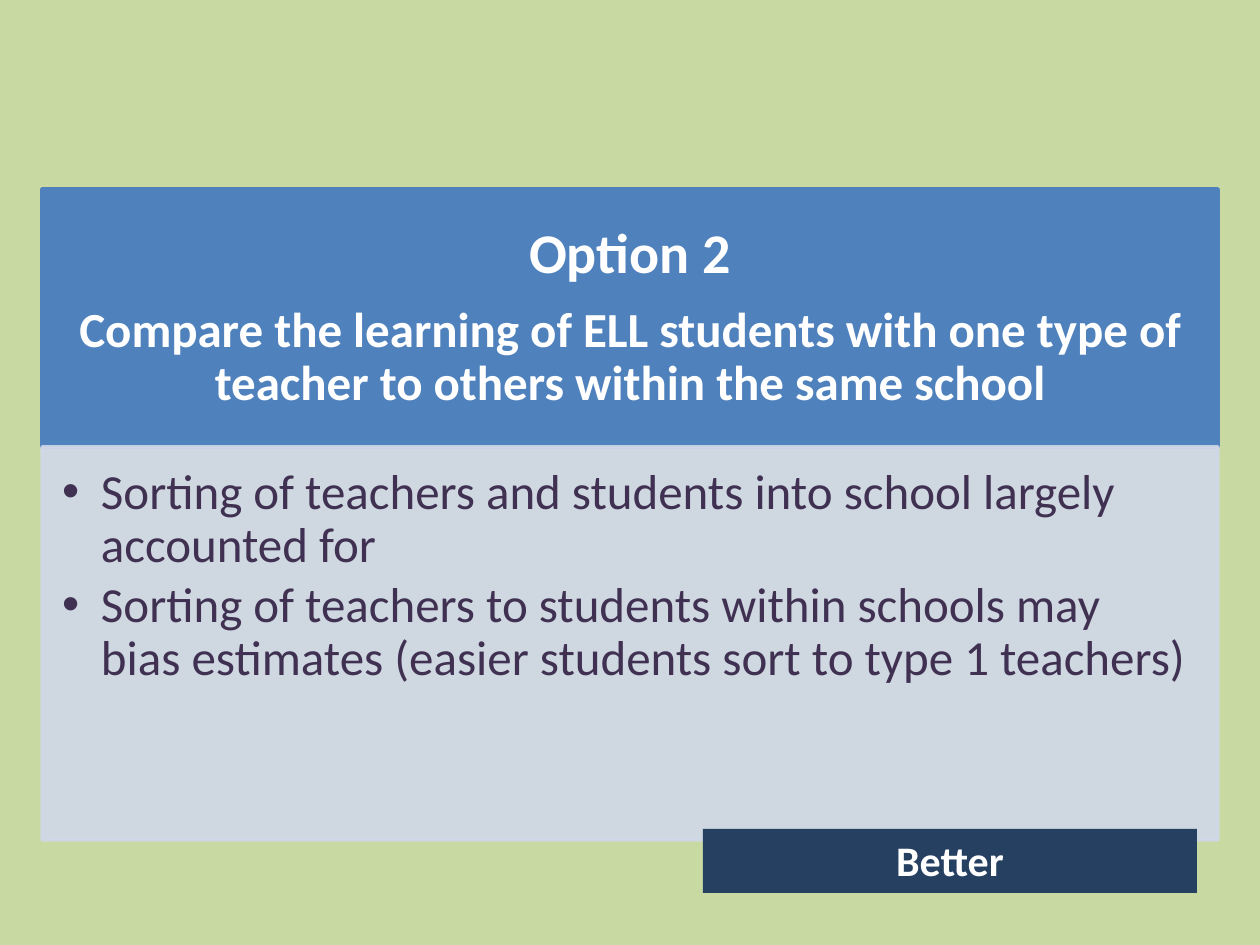
from dataclasses import dataclass

from lxml import etree
from pptx import Presentation
from pptx.dml.color import RGBColor
from pptx.enum.shapes import MSO_SHAPE
from pptx.enum.text import MSO_ANCHOR, MSO_AUTO_SIZE, PP_ALIGN
from pptx.oxml.ns import qn
from pptx.util import Emu, Pt

RECTANGLE = MSO_SHAPE.RECTANGLE
TOP, MIDDLE = MSO_ANCHOR.TOP, MSO_ANCHOR.MIDDLE
LEFT, CENTER = PP_ALIGN.LEFT, PP_ALIGN.CENTER
NO_AUTOFIT = MSO_AUTO_SIZE.NONE

PX_PER_INCH = 126
SLIDE_WIDTH, SLIDE_HEIGHT = 1260, 945


@dataclass(frozen=True)
class Theme:
    font: str = "Calibri"
    background: str = "C8DAA2"
    header: str = "4F81BD"
    panel: str = "D0D8E8"
    verdict: str = "254061"
    light_text: str = "FFFFFF"
    dark_text: str = "403152"
    title_size: int = 32
    body_size: int = 28
    verdict_size: int = 24
    outline: int = 2
    panel_opacity: int = 90


THEME = Theme()


def px(length):
    return Emu(round(length * 914400 / PX_PER_INCH))


def set_opacity(color_format_parent, percent):
    """Add an alpha value to every solid colour under the element."""
    for color in color_format_parent.iter(qn("a:srgbClr")):
        etree.SubElement(color, qn("a:alpha")).set("val", str(percent * 1000))


def format_box(box, color, outlined=True):
    box.fill.solid()
    box.fill.fore_color.rgb = RGBColor.from_string(color)
    if outlined:
        box.line.color.rgb = RGBColor.from_string(color)
        box.line.width = Pt(THEME.outline)
    else:
        box.line.fill.background()


def add_box(page, left, top, width, height, color, outlined=True):
    box = page.shapes.add_shape(RECTANGLE, px(left), px(top), px(width), px(height))
    box.shadow.inherit = False
    format_box(box, color, outlined)
    return box


def prepare_frame(box, insets, anchor):
    frame = box.text_frame
    frame.word_wrap = True
    frame.auto_size = NO_AUTOFIT
    frame.vertical_anchor = anchor
    frame.margin_left, frame.margin_top, frame.margin_right, frame.margin_bottom = map(px, insets)
    return frame


def add_bullet(para, indent):
    properties = para._p.get_or_add_pPr()
    properties.set("marL", str(px(indent)))
    properties.set("indent", str(-px(indent)))
    etree.SubElement(properties, qn("a:buFont")).set("typeface", "Arial")
    etree.SubElement(properties, qn("a:buChar")).set("char", "•")


def write_paragraphs(frame, lines, color, bold=False, align=CENTER,
                     spacing=0.9, gap=0, bullet_indent=None):
    """Write (text, size) lines; gap is a share of each line's type size."""
    for index, (text, size) in enumerate(lines):
        para = frame.add_paragraph() if index else frame.paragraphs[0]
        para.alignment = align
        para.line_spacing = spacing
        para.space_before = Pt(0)
        para.space_after = Pt(round(gap * size))
        if bullet_indent:
            add_bullet(para, bullet_indent)
        span = para.add_run()
        span.text = text
        span.font.name = THEME.font
        span.font.size = Pt(size)
        span.font.bold = bold
        span.font.color.rgb = RGBColor.from_string(color)


def add_header(page):
    title = page.shapes.title
    title.left, title.top, title.width, title.height = map(px, (42, 189, 1176, 258))
    format_box(title, THEME.header)
    frame = prepare_frame(title, (32, 18, 32, 18), MIDDLE)
    lines = [
        ("Option 2", THEME.title_size),
        ("Compare the learning of ELL students with one type of teacher "
         "to others within the same school", THEME.body_size),
    ]
    write_paragraphs(frame, lines, THEME.light_text, bold=True, gap=0.35)


def add_panel(page):
    panel = add_box(page, 42, 447, 1176, 393, THEME.panel)
    set_opacity(panel._element.spPr, THEME.panel_opacity)
    frame = prepare_frame(panel, (20, 20, 28, 30), TOP)
    points = [
        "Sorting of teachers and students into school largely accounted for",
        "Sorting of teachers to students within schools may bias estimates "
        "(easier students sort to type 1 teachers)",
    ]
    lines = [(point, THEME.body_size) for point in points]
    write_paragraphs(frame, lines, THEME.dark_text, align=LEFT, gap=0.15, bullet_indent=39)


def add_verdict(page):
    verdict = add_box(page, 703, 829, 494, 64, THEME.verdict, outlined=False)
    frame = prepare_frame(verdict, (13, 6, 13, 6), TOP)
    write_paragraphs(frame, [("Better", THEME.verdict_size)], THEME.light_text,
                     bold=True, spacing=1.0)


def main():
    deck = Presentation()
    deck.slide_width, deck.slide_height = px(SLIDE_WIDTH), px(SLIDE_HEIGHT)
    page = deck.slides.add_slide(deck.slide_layouts[5])  # title only
    page.background.fill.solid()
    page.background.fill.fore_color.rgb = RGBColor.from_string(THEME.background)

    # Option heading, its pros and cons, and the verdict label
    add_header(page)
    add_panel(page)
    add_verdict(page)
    deck.save("out.pptx")


if __name__ == "__main__":
    main()
